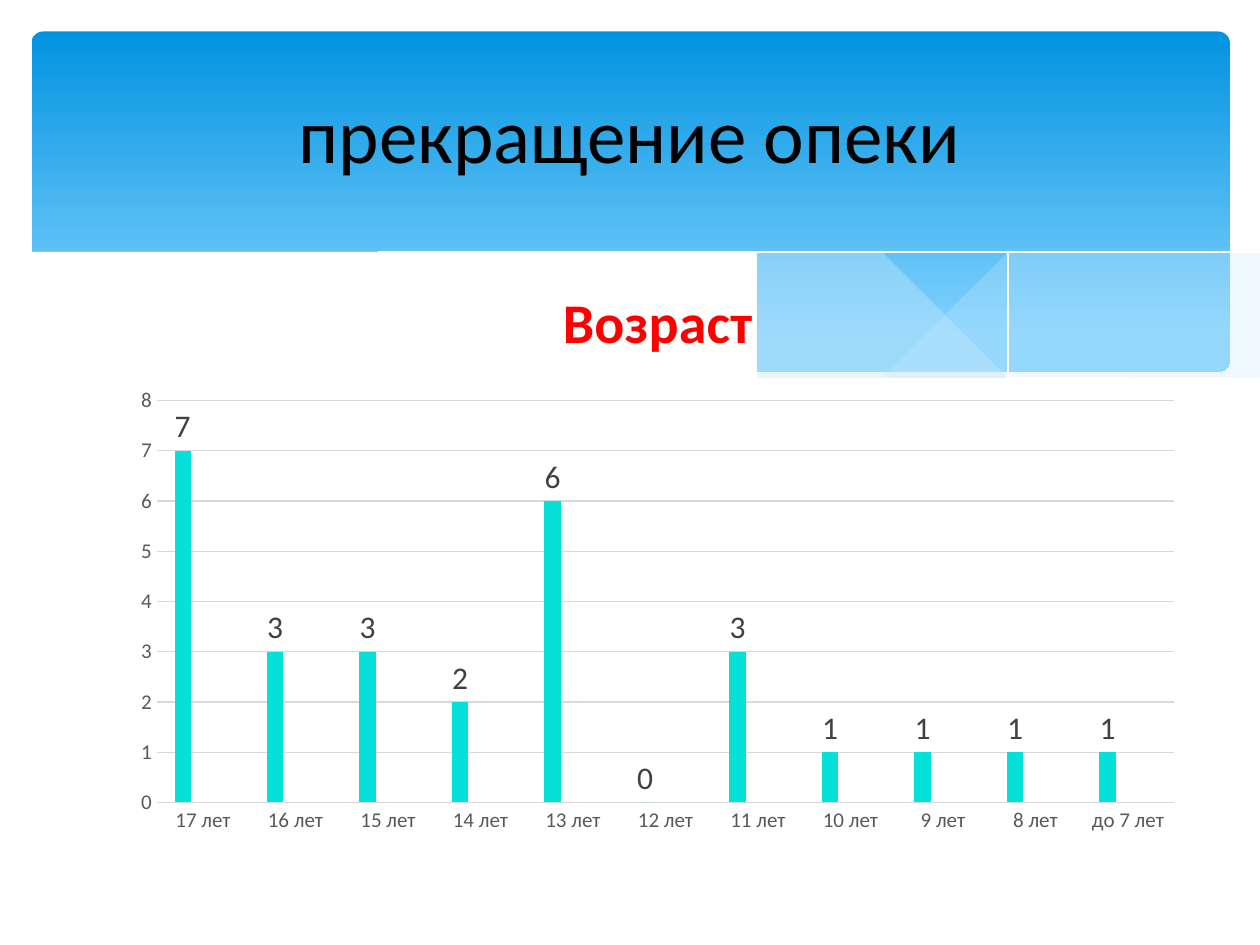
from pptx import Presentation
from pptx.chart.data import CategoryChartData
from pptx.dml.color import RGBColor
from pptx.enum.chart import XL_CHART_TYPE, XL_LABEL_POSITION, XL_TICK_MARK
from pptx.enum.shapes import MSO_SHAPE
from pptx.enum.text import MSO_ANCHOR, PP_ALIGN
from pptx.oxml.ns import qn
from pptx.util import Inches, Pt
from lxml import etree

COLUMNS = XL_CHART_TYPE.COLUMN_CLUSTERED
OUTSIDE = XL_LABEL_POSITION.OUTSIDE_END
NO_TICK = XL_TICK_MARK.NONE
ROUND = MSO_SHAPE.ROUNDED_RECTANGLE
MIDDLE, CENTER = MSO_ANCHOR.MIDDLE, PP_ALIGN.CENTER

TITLE = "прекращение опеки"
CHART_TITLE = "Возраст"
AGES = [f"{n} лет" for n in range(17, 7, -1)] + ["до 7 лет"]
COUNTS = [7, 3, 3, 2, 6, 0, 3, 1, 1, 1, 1]
EMPTY = [None] * len(AGES)
SERIES = [("Series 1", COUNTS, "05E0DB"), ("Series 2", EMPTY, "F5C040"),
          ("Series 3", EMPTY, "A5D028")]

THEME = {
    "font": "Calibri", "text": "000000", "accent": "FF0000",
    "axis": "595959", "label": "404040", "grid": "D9D9D9",
    "top": "0293E0", "low": "83D3FE", "wave": "C6E7FC", "paper": "FFFFFF",
    "title": 44, "head": 32, "value": 18, "tick": 12,
}

# Boxes in inches: left, top, width, height
BAND = (0.25, 0.25, 9.51, 2.7)
TITLE_BOX = (0.5, 0.37, 9, 1.37)
CHART_BOX = (0.95, 2.02, 8.54, 4.68)

# Each wave is a list of smooth edges, with an opacity in percent
WAVES = [
    ([[(9.76, 2), (9.21, 2.1), (8.61, 2.23), (7.53, 2.48), (6.61, 2.65)],
      [(6.61, 2.65), (7.32, 2.74), (8.03, 2.78), (8.72, 2.74),
       (9.28, 2.63), (9.76, 2.47)]], 29),
    ([[(8.93, 2.73), (8.07, 2.6), (7.06, 2.4), (6.29, 2.22), (5.55, 2.05),
       (4.89, 1.94), (4.2, 1.87), (3.61, 1.85), (2.86, 1.91)],
      [(2.86, 1.91), (3.62, 2.03), (4.49, 2.22), (5.66, 2.48), (6.5, 2.64),
       (7.22, 2.74), (8.07, 2.78), (8.93, 2.73)]], 40),
]
STRANDS = [
    [(3.09, 1.95), (3.53, 1.89), (4.16, 1.87), (5.1, 1.92), (6.08, 2.04),
     (6.95, 2.19), (7.95, 2.41), (9.07, 2.72)],
    [(6.13, 2.57), (6.95, 2.35), (7.76, 2.16), (8.66, 1.99), (9.24, 1.9),
     (9.75, 1.85)],
]
FRONT = [
    [(9.77, 2.46), (9.3, 2.62), (8.75, 2.73), (8.09, 2.77), (7.26, 2.72),
     (6.48, 2.62), (5.55, 2.45), (4.47, 2.2), (3.4, 1.97), (2.5, 1.86),
     (1.77, 1.84), (1.06, 1.89), (0.59, 1.99), (0.23, 2.13)],
    [(0.23, 3.29), (9.77, 3.29)],
]


def color(key):
    return RGBColor.from_string(THEME[key])


def inches(box):
    return [Inches(v) for v in box]


def style(font, size, key, bold=False):
    font.name, font.size, font.bold = THEME["font"], Pt(THEME[size]), bold
    font.color.rgb = color(key)


def smooth(knots, steps=6):
    """Return points of a Catmull-Rom curve through the knots."""
    if len(knots) < 3:
        return knots
    ends = [knots[0], *knots, knots[-1]]
    points = [knots[0]]
    for a, b, c, d in zip(ends, ends[1:], ends[2:], ends[3:]):
        for i in range(1, steps + 1):
            t = i / steps
            points.append(tuple(
                q + t / 2 * (r - p + t * (2 * p - 5 * q + 4 * r - s
                                          + t * (3 * q - p - 3 * r + s)))
                for p, q, r, s in zip(a, b, c, d)))
    return points


def outline(slide, edges, close):
    points = [p for edge in edges for p in smooth(edge)]
    pen = slide.shapes.build_freeform(*points[0], scale=Inches(1))
    pen.add_line_segments(points[1:], close=close)
    shape = pen.convert_to_shape()
    shape.shadow.inherit = False
    return shape


def add_wave(slide, edges, key, alpha=100):
    shape = outline(slide, edges, True)
    shape.line.fill.background()
    shape.fill.solid()
    shape.fill.fore_color.rgb = color(key)
    if alpha < 100:
        tint = shape.fill._xPr.find(".//" + qn("a:srgbClr"))
        etree.SubElement(tint, qn("a:alpha"), val=str(alpha * 1000))


def add_band(slide):
    band = slide.shapes.add_shape(ROUND, *inches(BAND))
    band.adjustments[0] = 0.034
    band.shadow.inherit = False
    band.line.fill.background()
    band.fill.gradient()
    band.fill.gradient_angle = 270
    for stop, key, place in zip(band.fill.gradient_stops,
                                ("top", "low"), (0, 0.9)):
        stop.color.rgb, stop.position = color(key), place


def add_strand(slide, knots):
    strand = outline(slide, [knots], False)
    strand.fill.background()
    strand.line.color.rgb = color("paper")
    strand.line.width = Pt(0)


def set_title(slide):
    title = slide.shapes.title
    title.left, title.top, title.width, title.height = inches(TITLE_BOX)
    slide.shapes._spTree.append(title._element)
    title.text_frame.vertical_anchor = MIDDLE
    para = title.text_frame.paragraphs[0]
    para.alignment = CENTER
    run = para.add_run()
    run.text = TITLE
    style(run.font, "title", "text")


def add_ages(slide):
    data = CategoryChartData()
    data.categories = AGES
    for name, values, _ in SERIES:
        data.add_series(name, values)
    chart = slide.shapes.add_chart(COLUMNS, *inches(CHART_BOX), data).chart
    chart.has_legend = False
    chart.font.name = THEME["font"]

    chart.has_title = True
    run = chart.chart_title.text_frame.paragraphs[0].add_run()
    run.text = CHART_TITLE
    style(run.font, "head", "accent", True)
    chart.chart_title.include_in_layout = False

    plot = chart.plots[0]
    plot.gap_width, plot.overlap, plot.vary_by_categories = 219, -27, False
    for series, (_, _, tone) in zip(plot.series, SERIES):
        series.format.fill.solid()
        series.format.fill.fore_color.rgb = RGBColor.from_string(tone)
        series.invert_if_negative = False
    labels = plot.series[0].data_labels
    labels.show_value, labels.position = True, OUTSIDE
    style(labels.font, "value", "label")

    ages, scale = chart.category_axis, chart.value_axis
    for axis in (ages, scale):
        axis.major_tick_mark = axis.minor_tick_mark = NO_TICK
        style(axis.tick_labels.font, "tick", "axis")
    scale.minimum_scale, scale.maximum_scale, scale.major_unit = 0, 8, 1
    scale.format.line.fill.background()
    for line in (ages.format.line, scale.major_gridlines.format.line):
        line.color.rgb, line.width = color("grid"), Pt(0.75)


def main():
    deck = Presentation()
    deck.slide_width, deck.slide_height = Inches(10), Inches(7.5)
    slide = deck.slides.add_slide(deck.slide_layouts.get_by_name("Title Only"))
    add_band(slide)
    for edges, alpha in WAVES:
        add_wave(slide, edges, "wave", alpha)
    for knots in STRANDS:
        add_strand(slide, knots)
    add_wave(slide, FRONT, "paper")
    set_title(slide)
    add_ages(slide)
    deck.save("out.pptx")


if __name__ == "__main__":
    main()
